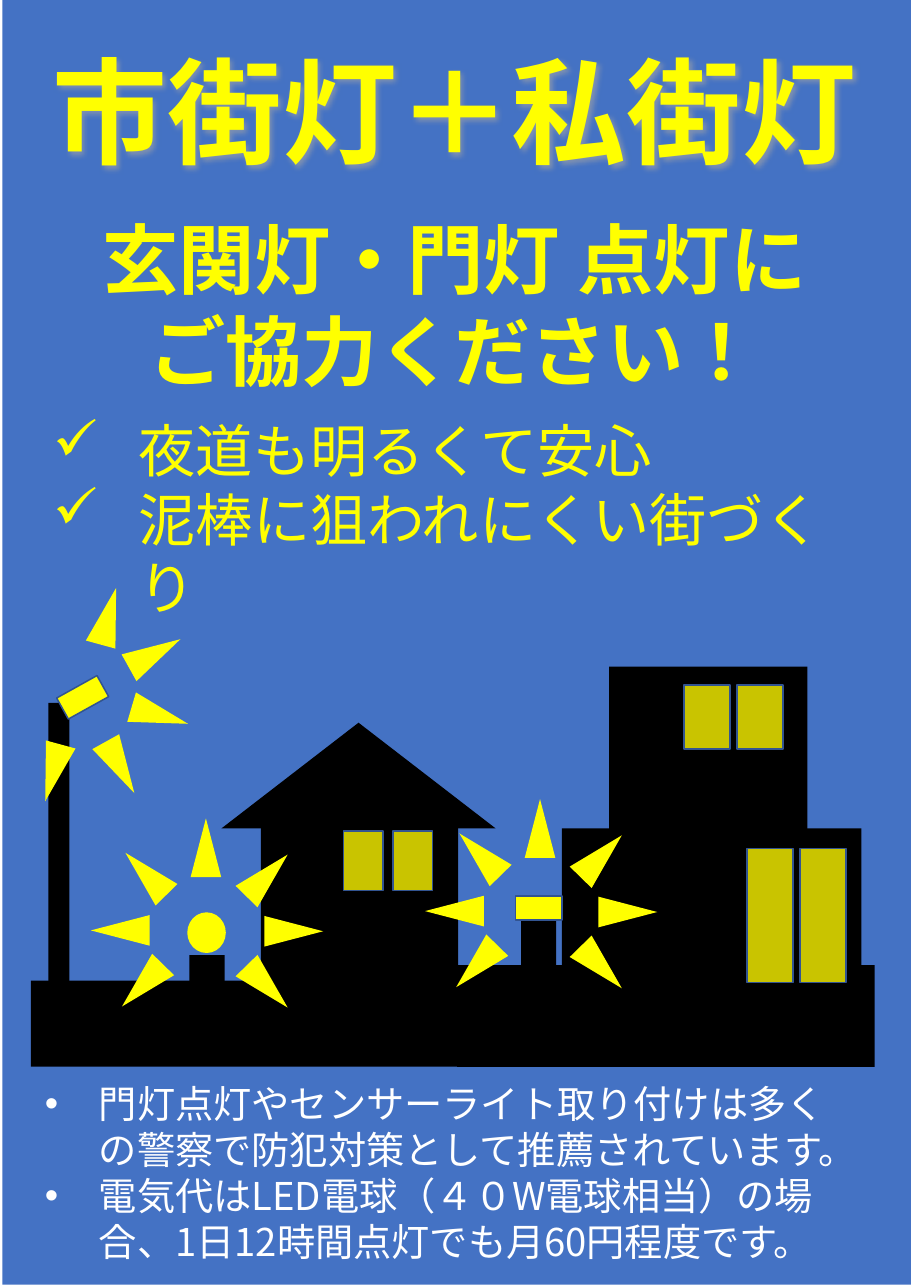
import math

import pptx
import pptx.util
import pptx.dml.color
import pptx.enum.lang
import pptx.enum.shapes
import pptx.enum.text
import pptx.oxml
import pptx.oxml.ns
from lxml import etree

Pt = pptx.util.Pt
KIND = pptx.enum.shapes.MSO_SHAPE
ALIGN = pptx.enum.text.PP_ALIGN
qn = pptx.oxml.ns.qn

# Content: box is left, top, width, height in points
FONT = "Noto Sans CJK JP"
HUES = {"sky": "4472C4", "dark": "000000", "light": "FFFF00",
        "pane": "C9C400", "edge": "325491", "note": "FFFFFF",
        "shade": "A5A5A5"}

TITLE = dict(lines=["市街灯＋私街灯"], box=(18, 23, 558, 98),
             size=75, bold=True, hue="light")
TEXTS = [
    dict(lines=["玄関灯・門灯 点灯に", "ご協力ください！"],
         box=(34.6, 135.4, 525, 128), size=49.9, bold=True, hue="light"),
    dict(lines=["夜道も明るくて安心", "泥棒に狙われにくい街づくり"],
         box=(27.4, 267.8, 554.4, 142), size=37.4, bold=False, hue="light",
         mark=("Wingdings", "ü"), indent=56.2),
    dict(lines=["門灯点灯やセンサーライト取り付けは多くの警察で防犯対策として"
                "推薦されています。",
                "電気代はLED電球（４０W電球相当）の場合、"
                "1日12時間点灯でも月60円程度です。"],
         box=(22.3, 702.7, 540.7, 128), size=25, bold=False, hue="note",
         mark=("Arial", "•"), indent=35.3),
]

SKY = (1.5, 0, 593.9, 839.5)
DARK = [
    ("RECTANGLE", (20.2, 640.8, 278.6, 56.2)),           # ground, left
    ("RECTANGLE", (298.8, 630.7, 272.9, 66.6)),          # ground, right
    ("RECTANGLE", (398.2, 435.6, 129.6, 118.8)),         # upper floor
    ("RECTANGLE", (367.2, 541.4, 195.8, 118.8)),         # lower floor
    ("ISOSCELES_TRIANGLE", (144.7, 472.3, 179.3, 69.1)),  # roof
    ("RECTANGLE", (170.6, 541.2, 128.9, 118.8)),         # small house
    ("RECTANGLE", (123.8, 624.2, 23, 56.2)),             # gate post
    ("RECTANGLE", (340.6, 601.2, 23, 56.2)),             # door post
    ("RECTANGLE", (31.7, 459.4, 13.7, 187.2)),           # street pole
]
# First pane of each window pair, and the step to the second
PANES = [((447.1, 447.8, 30.2, 41.8), 34.6),
         ((488.2, 554.4, 30.2, 87.8), 34.6),
         ((224.6, 543.2, 25.9, 38.9), 32.4)]

# Ray angle -> offset of its middle from the lamp
RAYS = {0: (0, -54), 44.4: (40, -35.8), 90: (57.4, 0.6),
        135.6: (40, 36.7), 224.4: (-41.4, 36), 270: (-56, 0),
        315.6: (-39.2, -37)}
RAY = (20, 38.4)
LAMPS = [
    dict(kind="OVAL", box=(122.4, 596.2, 25.2, 26.6), edge=None,
         mid=(134.6, 608), turn=0, skip=()),
    dict(kind="RECTANGLE", box=(337, 585.4, 30.2, 15.8), edge="edge",
         mid=(353, 595.4), turn=0, skip=()),
    dict(kind="RECTANGLE", box=(38.9, 447.8, 30.2, 15.8), edge="edge",
         mid=(52.2, 454.3), turn=150.9, skip=(90, 135.6)),
]


def tint(name):
    return pptx.dml.color.RGBColor.from_string(HUES[name])


def place(item, box):
    for key, val in zip(("left", "top", "width", "height"), box):
        setattr(item, key, Pt(val))


def draw(kind, box, hue, edge=None, turn=0):
    item = shapes.add_shape(getattr(KIND, kind), *[Pt(v) for v in box])
    item.shadow.inherit = False
    item.fill.solid()
    item.fill.fore_color.rgb = tint(hue)
    if edge:
        item.line.color.rgb = tint(edge)
        item.line.width = Pt(1)
    else:
        item.line.fill.background()
    item.rotation = turn % 360
    return item


def write(item, part):
    place(item, part["box"])
    frame = item.text_frame
    frame.word_wrap = True
    frame.auto_size = pptx.enum.text.MSO_AUTO_SIZE.NONE
    frame.vertical_anchor = pptx.enum.text.MSO_ANCHOR.TOP
    mark = part.get("mark")
    form = dict(alignment=ALIGN.LEFT if mark else ALIGN.CENTER,
                line_spacing=1.0, space_before=Pt(0), space_after=Pt(0))
    look = dict(name=FONT, size=Pt(part["size"]), bold=part["bold"],
                language_id=pptx.enum.lang.MSO_LANGUAGE_ID.JAPANESE)
    for num, line in enumerate(part["lines"]):
        para = frame.add_paragraph() if num else frame.paragraphs[0]
        for key, val in form.items():
            setattr(para, key, val)
        if mark:
            props = para._p.get_or_add_pPr()
            gap = Pt(part["indent"])
            props.set("marL", str(gap))
            props.set("indent", str(-gap))
            etree.SubElement(props, qn("a:buFont"), typeface=mark[0])
            etree.SubElement(props, qn("a:buChar"), char=mark[1])
        run = para.add_run()
        run.text = line
        for key, val in look.items():
            setattr(run.font, key, val)
        run.font.color.rgb = tint(part["hue"])
        etree.SubElement(run._r.get_or_add_rPr(), qn("a:ea"), typeface=FONT)


# Page
deck = pptx.Presentation()
deck.slide_width, deck.slide_height = Pt(595.44), Pt(841.68)
slide = deck.slides.add_slide(deck.slide_layouts[5])
shapes = slide.shapes

# Sky behind the title
title = shapes.title
title._element.addprevious(draw("RECTANGLE", SKY, "sky")._element)

# Title with a soft shadow
write(title, TITLE)
title.fill.background()
glow = etree.SubElement(title._element.spPr, qn("a:effectLst"))
shade = etree.SubElement(glow, qn("a:outerShdw"), blurRad="38100",
                         dist="19050", dir="2700000", algn="tl")
hue = etree.SubElement(shade, qn("a:srgbClr"), val=HUES["shade"])
etree.SubElement(hue, qn("a:alpha"), val="60000")

# Other text
for part in TEXTS:
    write(shapes.add_textbox(0, 0, 0, 0), part)

# Town and windows
for kind, box in DARK:
    draw(kind, box, "dark")
for (left, *rest), step in PANES:
    for num in range(2):
        draw("RECTANGLE", (left + num * step, *rest), "pane", "edge")

# Lamps and rays
for lamp in LAMPS:
    turn = lamp["turn"]
    draw(lamp["kind"], lamp["box"], "light", lamp["edge"], turn)
    cos, sin = math.cos(math.radians(turn)), math.sin(math.radians(turn))
    for angle, (dx, dy) in RAYS.items():
        if angle in lamp["skip"]:
            continue
        left = lamp["mid"][0] + dx * cos - dy * sin - RAY[0] / 2
        top = lamp["mid"][1] + dx * sin + dy * cos - RAY[1] / 2
        draw("ISOSCELES_TRIANGLE", (left, top, *RAY), "light",
             turn=angle + turn)

deck.save("out.pptx")
